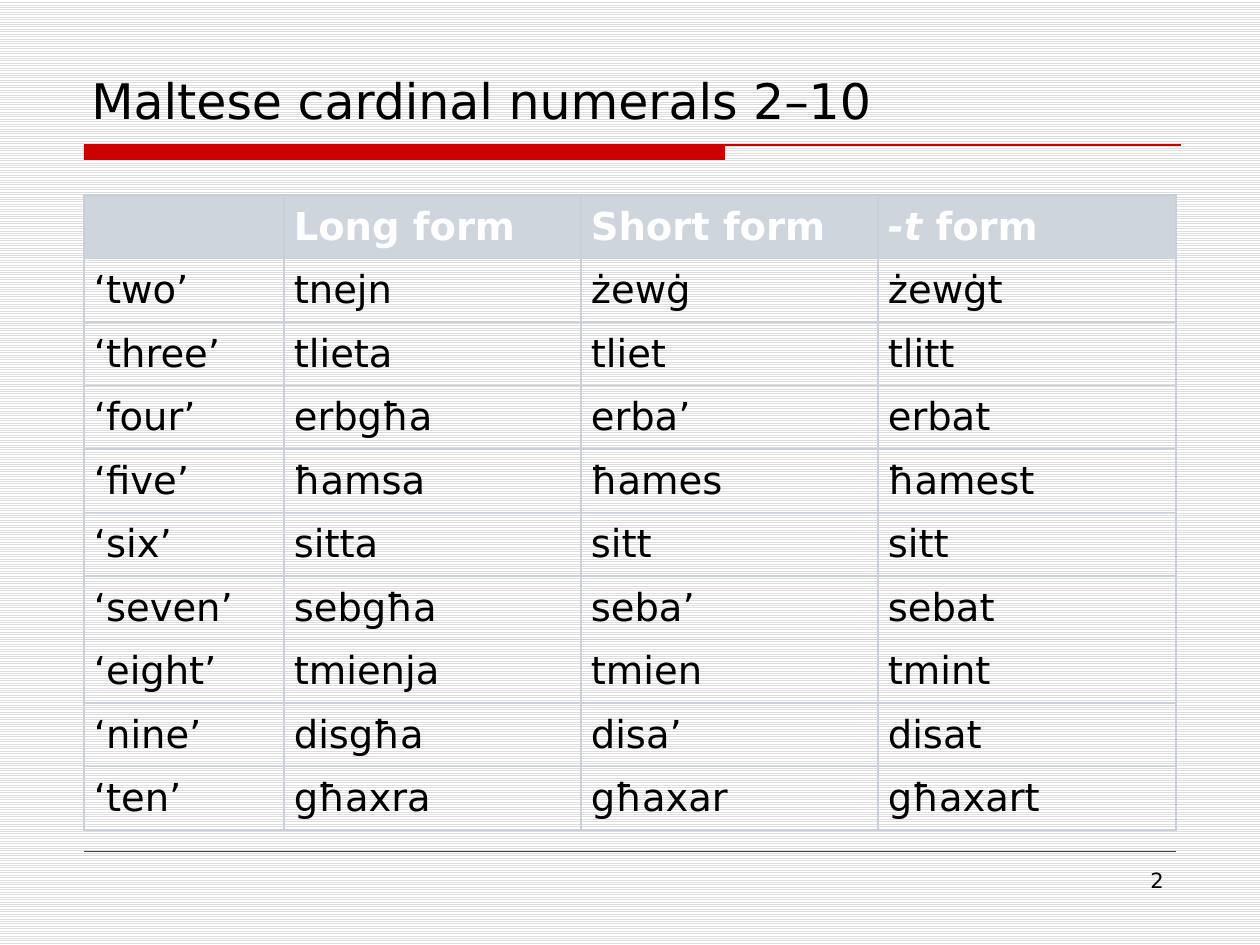
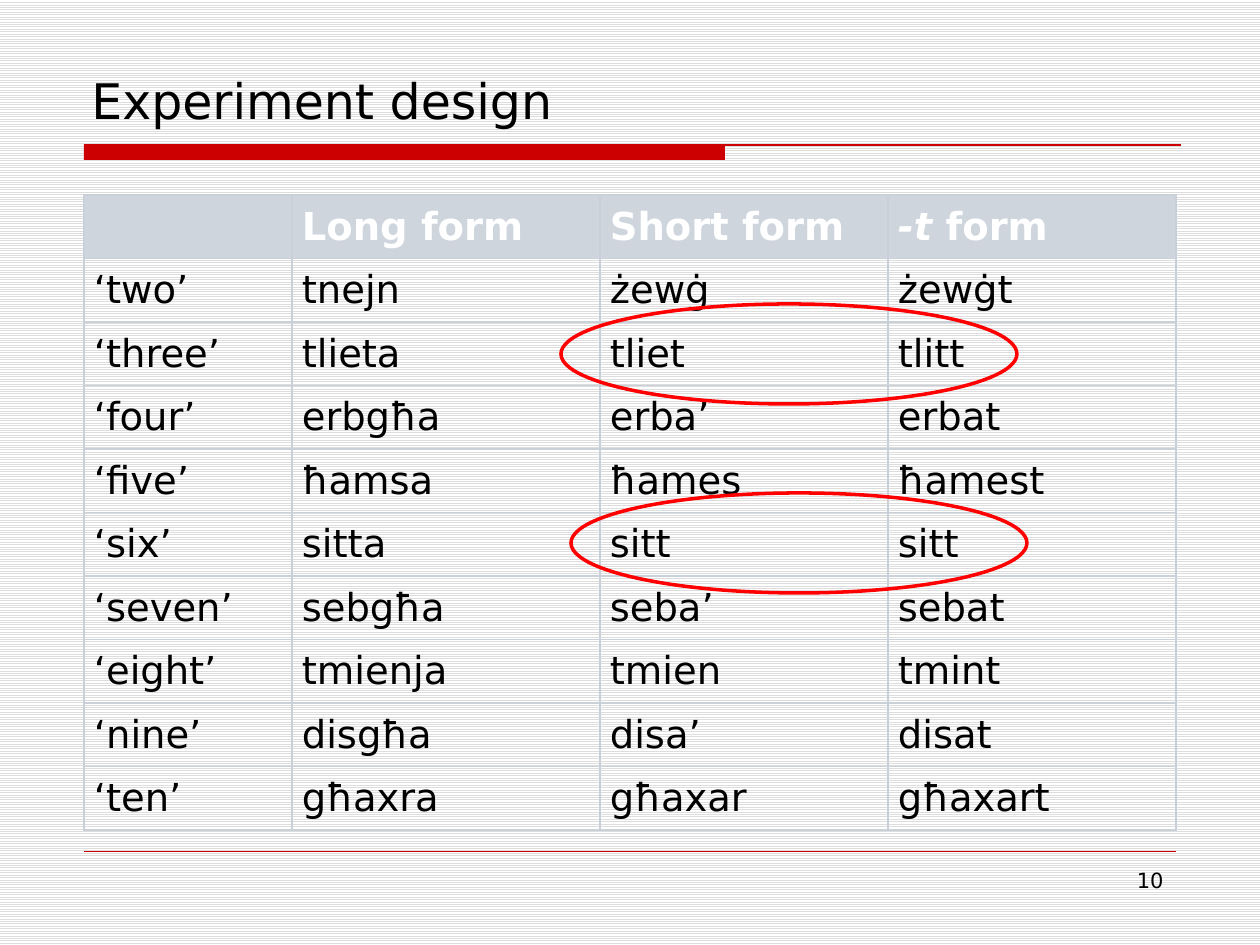
from dataclasses import dataclass

from lxml import etree
from pptx import Presentation
from pptx.dml.color import RGBColor
from pptx.enum.dml import MSO_PATTERN
from pptx.enum.shapes import MSO_CONNECTOR, MSO_SHAPE
from pptx.enum.text import MSO_ANCHOR, PP_ALIGN
from pptx.oxml.ns import qn
from pptx.util import Pt

EMU_PER_PX = 914400 / 126
BLANK_LAYOUT = 6
STRAIGHT = MSO_CONNECTOR.STRAIGHT
RECTANGLE, OVAL = MSO_SHAPE.RECTANGLE, MSO_SHAPE.OVAL
LIGHT_HORIZONTAL = MSO_PATTERN.LIGHT_HORIZONTAL
MIDDLE, BOTTOM = MSO_ANCHOR.MIDDLE, MSO_ANCHOR.BOTTOM
LEFT, RIGHT = PP_ALIGN.LEFT, PP_ALIGN.RIGHT


@dataclass(frozen=True)
class Theme:
    font: str = "DejaVu Sans"
    title_size: int = 28
    table_size: int = 22
    number_size: int = 12
    text: RGBColor = RGBColor(0, 0, 0)
    paper: RGBColor = RGBColor(255, 255, 255)
    stripe: RGBColor = RGBColor(0xDD, 0xDD, 0xDD)
    accent: RGBColor = RGBColor(0xCC, 0, 0)
    highlight: RGBColor = RGBColor(255, 0, 0)
    header: RGBColor = RGBColor(0xCE, 0xD5, 0xDD)
    border: str = "C9D0D8"
    border_width: float = 0.75


THEME = Theme()

NUMERALS = [
    ("", "Long form", "Short form", "-t form"),
    ("‘two’", "tnejn", "żewġ", "żewġt"),
    ("‘three’", "tlieta", "tliet", "tlitt"),
    ("‘four’", "erbgħa", "erba’", "erbat"),
    ("‘five’", "ħamsa", "ħames", "ħamest"),
    ("‘six’", "sitta", "sitt", "sitt"),
    ("‘seven’", "sebgħa", "seba’", "sebat"),
    ("‘eight’", "tmienja", "tmien", "tmint"),
    ("‘nine’", "disgħa", "disa’", "disat"),
    ("‘ten’", "għaxra", "għaxar", "għaxart"),
]
TABLE_TOP, TABLE_HEIGHT, CELL_INSET = 195, 635, 10
TABLE_COLUMNS = [(0, 1), (2,), (3,)]  # the numerals are split over three tables
ITALIC_SUFFIX = "-t "

SLIDES = [
    {"title": "Maltese cardinal numerals 2–10", "number": "2",
     "edges": [84, 284, 581, 878, 1176], "ovals": []},
    {"title": "Experiment design", "number": "10",
     "edges": [84, 292, 600, 888, 1176], "ovals": [(561, 304), (571, 493)]},
]
OVAL_SIZE = (456, 100)


def px(*lengths):
    return [round(length * EMU_PER_PX) for length in lengths]


def write(frame, text, size, color=THEME.text, bold=False, align=LEFT):
    """Fill the first paragraph, setting a leading suffix in italics."""
    paragraph = frame.paragraphs[0]
    paragraph.alignment = align
    lead = ITALIC_SUFFIX if text.startswith(ITALIC_SUFFIX) else ""
    for part in filter(None, (lead, text[len(lead):])):
        run = paragraph.add_run()
        run.text = part
        font_format = {"name": THEME.font, "size": Pt(size), "bold": bold,
                       "italic": part == lead}
        for name, value in font_format.items():
            setattr(run.font, name, value)
        run.font.color.rgb = color


presentation = Presentation()
presentation.slide_width, presentation.slide_height = px(1260, 945)

for content in SLIDES:
    slide = presentation.slides.add_slide(presentation.slide_layouts[BLANK_LAYOUT])
    shapes = slide.shapes
    background = slide.background.fill
    background.patterned()
    background.pattern = LIGHT_HORIZONTAL
    background.fore_color.rgb = THEME.stripe
    background.back_color.rgb = THEME.paper

    # Title bar and rules
    bar = shapes.add_shape(RECTANGLE, *px(84, 145, 641, 15))
    bar.shadow.inherit = False
    bar.fill.solid()
    bar.fill.fore_color.rgb = THEME.accent
    bar.line.fill.background()
    for right, y, width in [(1181, 145, 0.75), (1176, 851, 0.25)]:
        rule = shapes.add_connector(STRAIGHT, *px(84, y, right, y))
        rule.line.color.rgb = THEME.accent
        rule.line.width = Pt(width)
        etree.SubElement(rule.line._get_or_add_ln().getparent(), qn("a:effectLst"))

    # Title and slide number
    for text, box, size, anchor, align in [
        (content["number"], (903, 861, 273, 66), THEME.number_size, None, RIGHT),
        (content["title"], (79, 42, 1103, 93), THEME.title_size, BOTTOM, LEFT),
    ]:
        frame = shapes.add_textbox(*px(*box)).text_frame
        frame.word_wrap = True
        frame.vertical_anchor = anchor
        write(frame, text, size, align=align)

    # Numerals
    edges = content["edges"]
    for columns in TABLE_COLUMNS:
        left, right = edges[columns[0]], edges[columns[-1] + 1]
        table = shapes.add_table(
            len(NUMERALS), len(columns),
            *px(left, TABLE_TOP, right - left, TABLE_HEIGHT)).table
        table.first_row = table.horz_banding = False
        for index, column in enumerate(columns):
            table.columns[index].width = px(edges[column + 1] - edges[column])[0]
            for row, words in enumerate(NUMERALS):
                cell = table.cell(row, index)
                is_header = row == 0
                cell.vertical_anchor = MIDDLE
                cell.margin_left, cell.margin_right = px(CELL_INSET, CELL_INSET)
                cell.margin_top = cell.margin_bottom = 0
                write(cell.text_frame, words[column], THEME.table_size,
                      THEME.paper if is_header else THEME.text, bold=is_header)
                properties = cell._tc.get_or_add_tcPr()
                for side in ("lnL", "lnR", "lnT", "lnB"):
                    line = etree.SubElement(properties, qn(f"a:{side}"),
                                            w=str(Pt(THEME.border_width)))
                    solid = etree.SubElement(line, qn("a:solidFill"))
                    etree.SubElement(solid, qn("a:srgbClr"), val=THEME.border)
                if is_header:
                    cell.fill.solid()
                    cell.fill.fore_color.rgb = THEME.header
                else:
                    cell.fill.background()

    # Highlighted pairs
    for position in content["ovals"]:
        oval = shapes.add_shape(OVAL, *px(*position, *OVAL_SIZE))
        oval.shadow.inherit = False
        oval.fill.background()
        oval.line.color.rgb = THEME.highlight
        oval.line.width = Pt(2)

presentation.save("out.pptx")
